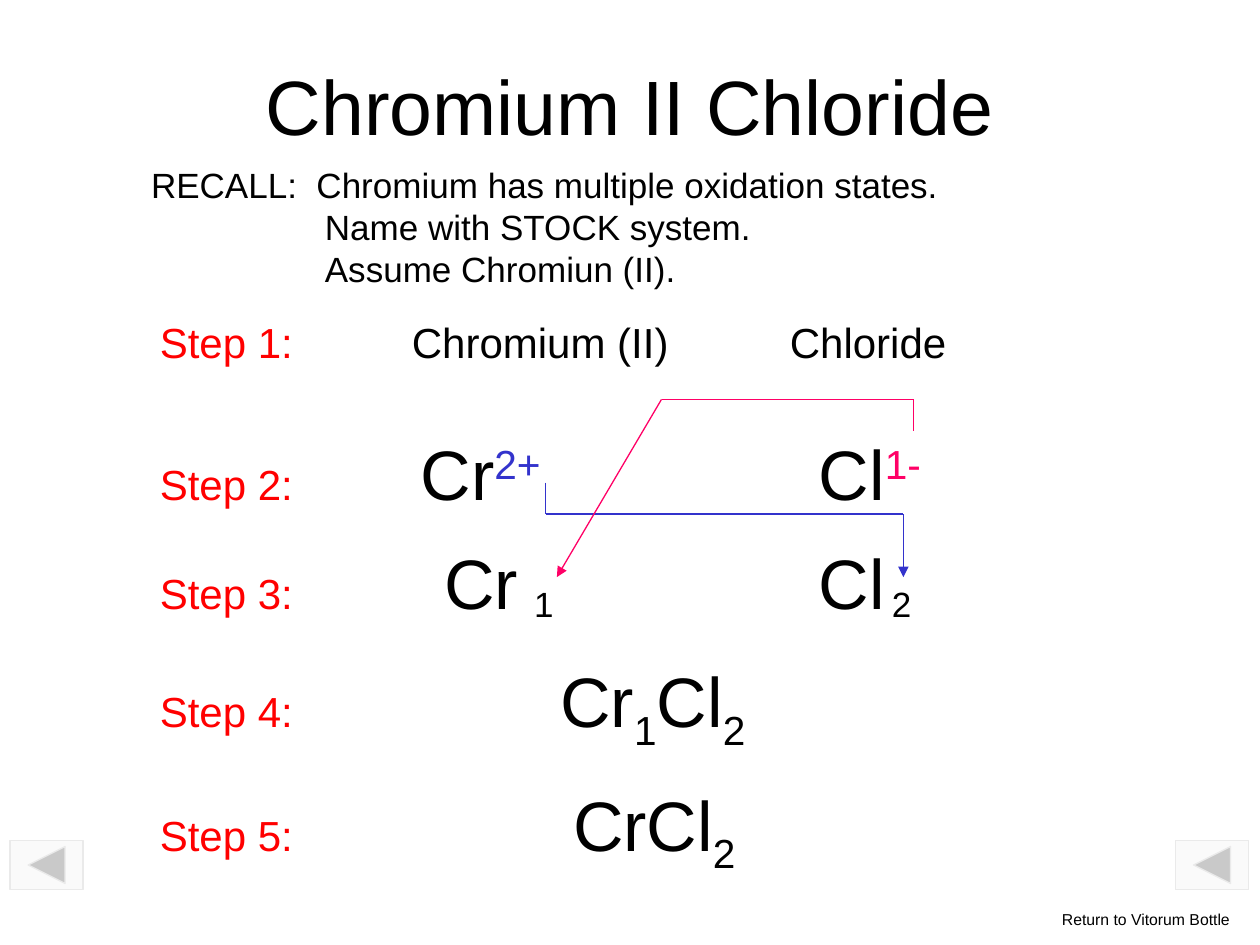
import pptx
import pptx.dml.color
import pptx.enum.shapes
import pptx.enum.text
import pptx.oxml.ns
import pptx.util
import itertools
import lxml.etree

Inches = pptx.util.Inches
RGBColor = pptx.dml.color.RGBColor
BLACK = RGBColor(0, 0, 0)
RED = RGBColor(0xFF, 0, 0)
BLUE = RGBColor(0x33, 0x33, 0xCC)
PINK = RGBColor(0xFF, 0, 0x66)
BUTTON_FILL = RGBColor(0xF7, 0xF7, 0xF7)
BUTTON_LINE = RGBColor(0xEA, 0xEA, 0xEA)
SUPER, SUB = 30, -25


def add_child(parent, tag, **attributes):
    child = lxml.etree.SubElement(parent, pptx.oxml.ns.qn(tag))
    for name, value in attributes.items():
        child.set(name, str(value))
    return child


def add_span(para, text, size, color=BLACK, baseline=0):
    span = para.add_run()
    span.text = text
    formats = {"name": "Arial", "size": pptx.util.Pt(size)}
    for name, value in formats.items():
        setattr(span.font, name, value)
    span.font.color.rgb = color
    if baseline:
        span._r.get_or_add_rPr().set("baseline", str(baseline * 1000))


def add_text(page, area, paragraphs, stops=(), **formats):
    box = page.shapes.add_textbox(*map(Inches, area))
    settings = {
        "word_wrap": False,
        "auto_size": pptx.enum.text.MSO_AUTO_SIZE.SHAPE_TO_FIT_TEXT,
    }
    for name, value in {**settings, **formats}.items():
        setattr(box.text_frame, name, value)
    for index, spans in enumerate(paragraphs):
        para = box.text_frame.add_paragraph() if index else box.text_frame.paragraphs[0]
        if stops:
            tabs = add_child(para._p.get_or_add_pPr(), "a:tabLst")
            for stop in stops:
                add_child(tabs, "a:tab", pos=Inches(stop), algn="l")
        for span in spans:
            add_span(para, *span)
    return box


def add_title(page, area):
    box = add_text(
        page, area, [[("Chromium II Chloride", 44)]],
        word_wrap=True,
        auto_size=pptx.enum.text.MSO_AUTO_SIZE.NONE,
        vertical_anchor=pptx.enum.text.MSO_ANCHOR.MIDDLE,
    )
    box.text_frame.paragraphs[0].alignment = pptx.enum.text.PP_ALIGN.CENTER


def add_recall(page, area):
    lines = [
        "RECALL:  Chromium has multiple oxidation states.",
        "\tName with STOCK system.",
        "\tAssume Chromiun (II).",
    ]
    add_text(page, area, [[(line, 20)] for line in lines], stops=[1.38])


def add_steps(page, left):
    steps = [
        (2.46, 6.45, 0.5, (2, 5), [("Chromium (II)\tChloride", 24)]),
        (3.37, 6.3, 0.77, (2.07, 5.23), [
            ("Cr", 40), ("2+", 40, BLUE, SUPER),
            ("\tCl", 40), ("1-", 40, PINK, SUPER),
        ]),
        (4.23, 5.96, 0.77, (2.26, 5.23), [("Cr\tCl", 40)]),
        (5.17, 4.9, 0.77, (3.18,), [
            ("Cr", 40), ("1", 40, BLACK, SUB),
            ("Cl", 40), ("2", 40, BLACK, SUB),
        ]),
        (6.15, 4.78, 0.77, (3.28,), [("CrCl", 40), ("2", 40, BLACK, SUB)]),
    ]
    for number, (top, width, height, stops, formula) in enumerate(steps, 1):
        label = (f"Step {number}:\t", 24, RED)
        add_text(page, (left, top, width, height), [[label, *formula]], stops)


def add_subscripts(page, top):
    for left, digit in ((4.14, "1"), (6.98, "2")):
        add_text(page, (left, top, 0.36, 0.43), [[(digit, 20)]])


def add_route(page, points, color):
    for start, end in itertools.pairwise(points):
        line = page.shapes.add_connector(
            pptx.enum.shapes.MSO_CONNECTOR.STRAIGHT, *map(Inches, start + end)
        )
        line.line.color.rgb = color
        line.line.width = pptx.util.Pt(0.75)
        if end == points[-1]:
            add_child(line.line._get_or_add_ln(), "a:tailEnd", type="triangle")
        add_child(line._element.spPr, "a:effectLst")


def add_back_button(page, area):
    button = page.shapes.add_shape(
        pptx.enum.shapes.MSO_SHAPE.ACTION_BUTTON_BACK_OR_PREVIOUS, *map(Inches, area)
    )
    button.shadow.inherit = False
    button.fill.solid()
    button.fill.fore_color.rgb = BUTTON_FILL
    color = button._element.spPr.find(".//" + pptx.oxml.ns.qn("a:srgbClr"))
    add_child(color, "a:alpha", val=50000)
    button.line.color.rgb = BUTTON_LINE
    button.line.width = pptx.util.Pt(0.75)


def add_footer(page, top):
    for left in (9.33, 0.08):
        add_back_button(page, (left, top, 0.58, 0.39))
    add_text(page, (8.33, top + 0.5, 1.58, 0.25), [[("Return to Vitorum Bottle", 9)]])


def main():
    deck = pptx.Presentation()
    deck.slide_width, deck.slide_height = Inches(10), Inches(7.5)
    page = deck.slides.add_slide(deck.slide_layouts[6])
    add_title(page, (0.75, 0.5, 8.5, 0.67))
    add_steps(page, 1.17)
    add_subscripts(page, 4.57)
    add_route(page, [(4.33, 3.83), (4.33, 4.08), (7.17, 4.08), (7.17, 4.58)], BLUE)
    add_route(page, [(7.25, 3.42), (7.25, 3.17), (5.25, 3.17), (4.42, 4.58)], PINK)
    add_recall(page, (1.1, 1.25, 6.59, 1.1))
    add_footer(page, 6.67)
    deck.save("out.pptx")


if __name__ == "__main__":
    main()
